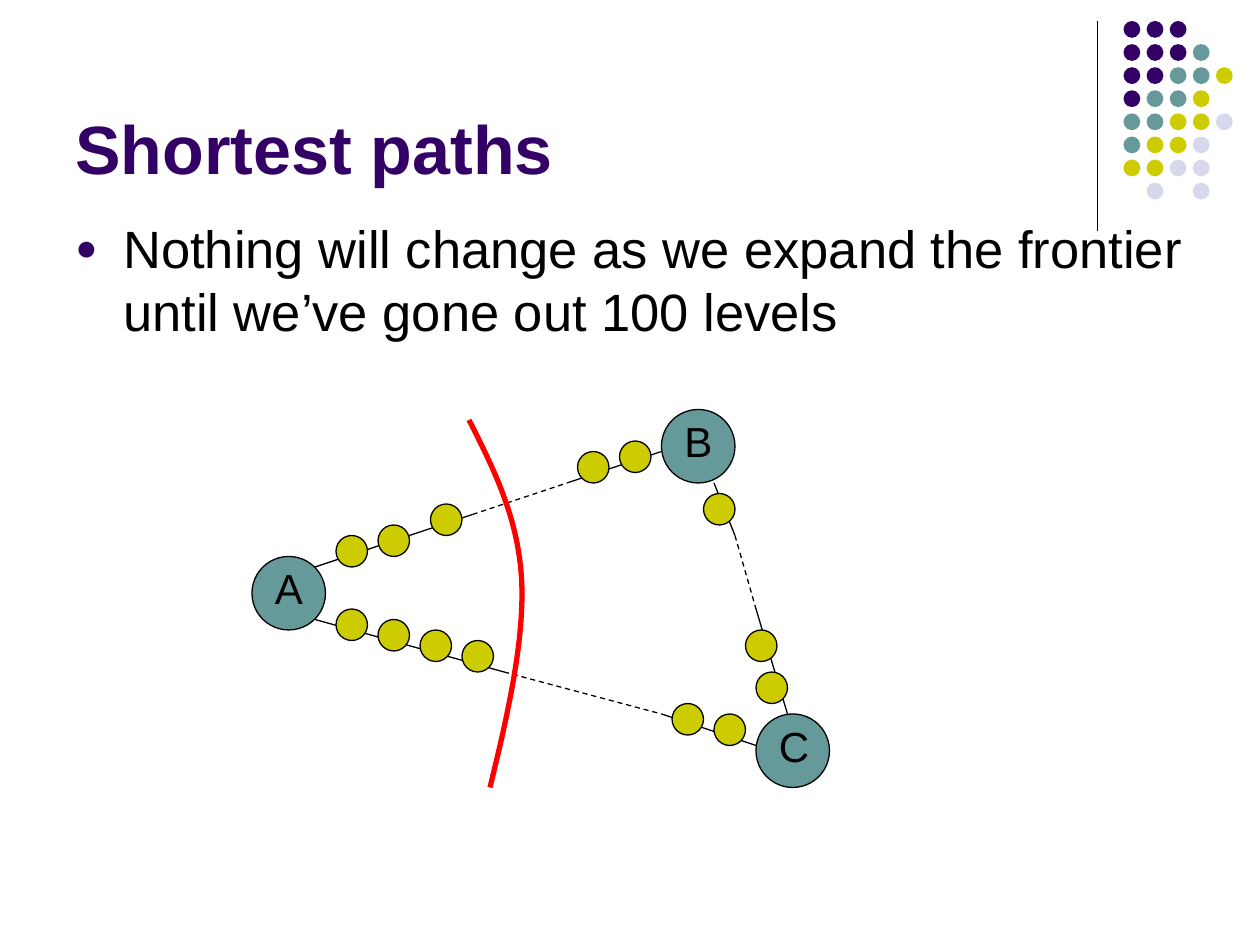
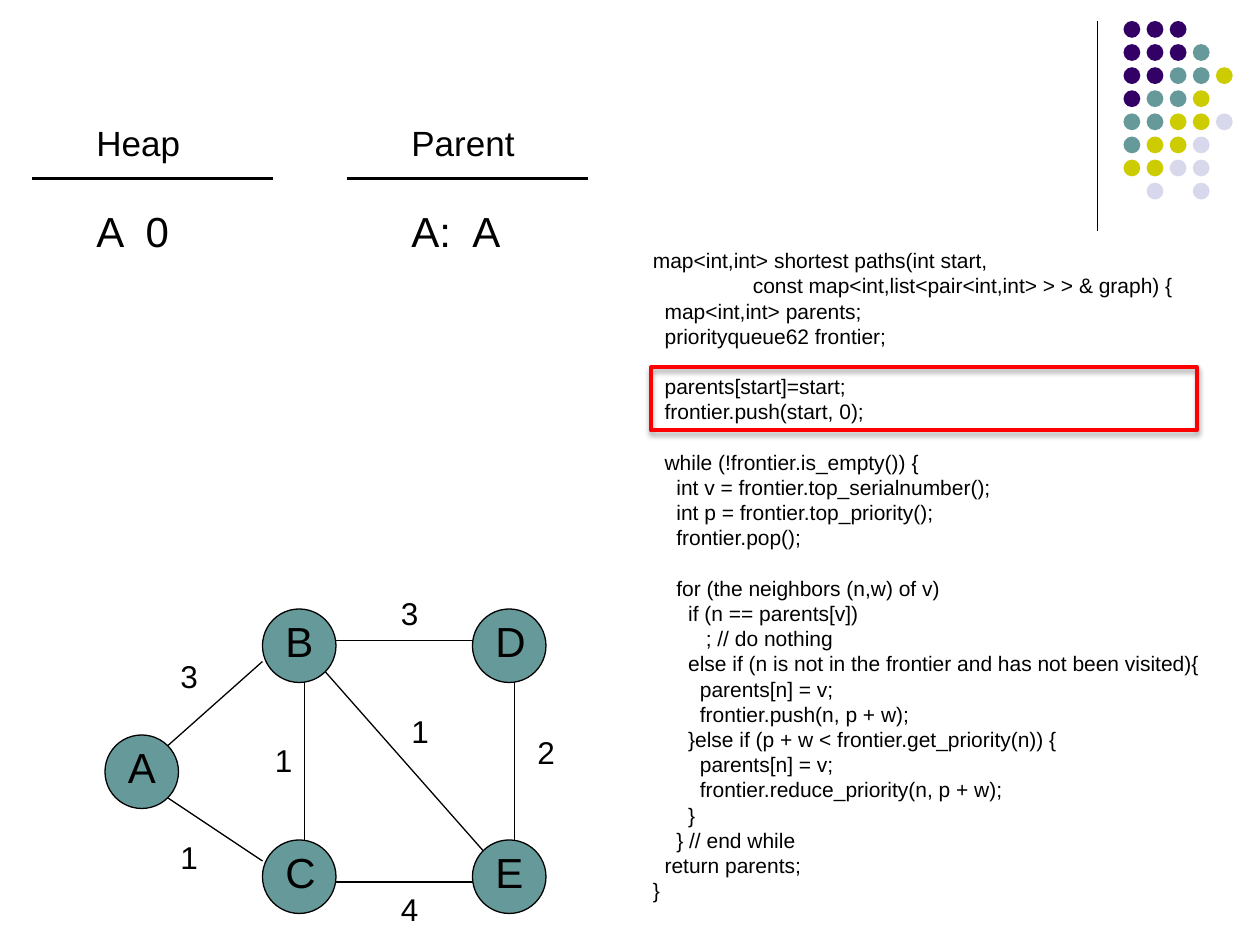
from dataclasses import dataclass
from typing import NamedTuple

from lxml.etree import SubElement
from pptx import Presentation
from pptx.dml.color import RGBColor
from pptx.enum.dml import MSO_LINE
from pptx.enum.shapes import MSO_CONNECTOR, MSO_SHAPE
from pptx.enum.text import MSO_ANCHOR
from pptx.oxml.ns import qn
from pptx.util import Inches, Pt

COLORS = {
    "ink": "000000",
    "purple": "330066",
    "teal": "669999",
    "olive": "CCCC00",
    "mist": "D8D8EC",
    "red": "FF0000",
}
FONT = "Arial"
WIDTH, HEIGHT = Inches(10), Inches(7.5)
COLUMNS = 120
CELL = WIDTH // COLUMNS
LEADING = 1.2
SPACE_WIDTH = 0.28
NODE_SIZE, BEAD_SIZE = 7, 3
DOT_SIZE, DOT_PITCH = 1.6, 2.2
DOT_COLORS = {"p": "purple", "t": "teal", "o": "olive", "m": "mist"}
DOT_ROWS = ("ppp", "pppt", "pptto", "ptto", "ttoom", "toom", "oomm", ".m.m")


class Box(NamedTuple):
    left: float
    top: float
    width: float
    height: float


class Edge(NamedTuple):
    x1: float
    y1: float
    x2: float
    y2: float
    dashed: bool = False


class Node(NamedTuple):
    name: str
    left: float
    top: float


class CodeLine(NamedTuple):
    spaces: int
    text: str
    gap_lines: int = 0


@dataclass(frozen=True)
class TextStyle:
    size: float
    color: str = "ink"
    bold: bool = False
    anchor: MSO_ANCHOR = MSO_ANCHOR.TOP


TITLE = TextStyle(39, "purple", True, MSO_ANCHOR.BOTTOM)
BODY, LABEL, HEADING, WEIGHT, CODE = map(TextStyle, (30, 24, 20, 18, 12))

PATH_NODES = (Node("A", 24, 53), Node("B", 63, 39), Node("C", 72, 68))
PATH_EDGES = (
    Edge(30, 54, 45, 49), Edge(45, 49, 54, 46, True), Edge(54, 46, 63, 43),
    Edge(30, 59, 48, 64), Edge(48, 64, 63, 68, True), Edge(63, 68, 72, 71),
    Edge(68, 46, 70, 51), Edge(70, 51, 72, 58, True), Edge(72, 58, 75, 68),
)
BEADS = (
    (32, 51), (36, 50), (41, 48), (55, 43), (59, 42),
    (32, 58), (36, 59), (40, 60), (44, 61), (64, 67), (68, 68),
    (72, 64), (71, 60), (67, 47),
)
FRONTIER = (
    ((44.67, 40), (47, 44.6), (49.3, 49.2), (49.67, 55)),
    ((49.67, 55), (50, 60.8), (48.4, 67.9), (46.67, 75)),
)

GRAPH_NODES = (
    Node("A", 10, 70), Node("B", 25, 58), Node("C", 25, 80),
    Node("E", 45, 80), Node("D", 45, 58),
)
GRAPH_EDGES = (
    Edge(16, 71, 25, 63), Edge(16, 76, 25, 82), Edge(32, 84, 45, 84),
    Edge(49, 80, 49, 65), Edge(29, 80, 29, 65), Edge(32, 61, 45, 61),
    Edge(31, 64, 46, 81),
)
WEIGHTS = (
    ("1", 16, 79.2), ("1", 25, 70), ("3", 16, 62), ("3", 37, 56),
    ("2", 50, 69.2), ("1", 38, 67.2), ("4", 37, 84.2),
)
TABLES = (("Heap", "A\t0", 8, 4.7), ("Parent", "A:\tA", 38, 5.8))
CODE_LINES = (
    CodeLine(0, "map<int,int> shortest paths(int start,"),
    CodeLine(17, "const map<int,list<pair<int,int> > > & graph) {"),
    CodeLine(2, "map<int,int> parents;"),
    CodeLine(2, "priorityqueue62 frontier;"),
    CodeLine(2, "parents[start]=start;", 1),
    CodeLine(2, "frontier.push(start, 0);"),
    CodeLine(2, "while (!frontier.is_empty()) {", 1),
    CodeLine(4, "int v = frontier.top_serialnumber();"),
    CodeLine(4, "int p = frontier.top_priority();"),
    CodeLine(4, "frontier.pop();"),
    CodeLine(4, "for (the neighbors (n,w) of v)", 1),
    CodeLine(6, "if (n == parents[v])"),
    CodeLine(9, "; // do nothing"),
    CodeLine(6, "else if (n is not in the frontier and has not been visited){"),
    CodeLine(8, "parents[n] = v;"),
    CodeLine(8, "frontier.push(n, p + w);"),
    CodeLine(6, "}else if (p + w < frontier.get_priority(n)) {"),
    CodeLine(8, "parents[n] = v;"),
    CodeLine(8, "frontier.reduce_priority(n, p + w);"),
    CodeLine(6, "}"),
    CodeLine(4, "} // end while"),
    CodeLine(2, "return parents;"),
    CodeLine(0, "}"),
)


def cells(*counts: float) -> list[int]:
    return [round(count * CELL) for count in counts]


def rgb(name: str) -> RGBColor:
    return RGBColor.from_string(COLORS[name])


def set_line(line, color: str, width: float) -> None:
    line.color.rgb = rgb(color)
    line.width = Pt(width)


def add_preset(slide, preset, box: Box, fill: str = "", line: str = "", width: float = 0.75):
    shape = slide.shapes.add_shape(preset, *cells(*box))
    shape.shadow.inherit = False
    if fill:
        shape.fill.solid()
        shape.fill.fore_color.rgb = rgb(fill)
    else:
        shape.fill.background()
    if line:
        set_line(shape.line, line, width)
    else:
        shape.line.fill.background()
    return shape


def add_edge(slide, edge: Edge, width: float = 0.75) -> None:
    connector = slide.shapes.add_connector(MSO_CONNECTOR.STRAIGHT, *cells(*edge[:4]))
    set_line(connector.line, "ink", width)
    if edge.dashed:
        connector.line.dash_style = MSO_LINE.DASH
    SubElement(connector.element.spPr, qn("a:effectLst"))


def add_text(slide, box: Box, lines: list[str], style: TextStyle):
    frame = slide.shapes.add_textbox(*cells(*box)).text_frame
    frame.word_wrap = True
    frame.vertical_anchor = style.anchor
    for index, line in enumerate(lines):
        paragraph = frame.add_paragraph() if index else frame.paragraphs[0]
        paragraph.text = line
        paragraph.line_spacing = Pt(style.size * LEADING)
        font = paragraph.font
        font.name, font.size, font.bold = FONT, Pt(style.size), style.bold
        font.color.rgb = rgb(style.color)
    return frame.paragraphs


def indent(paragraph, margin: int, first: int = 0):
    properties = paragraph._p.get_or_add_pPr()
    properties.set("marL", str(margin))
    properties.set("indent", str(first))
    return properties


def add_bullet(paragraph) -> None:
    hanging = Inches(0.38)
    properties = indent(paragraph, hanging, -hanging)
    color = SubElement(properties, qn("a:buClr"))
    SubElement(color, qn("a:srgbClr"), val=COLORS["purple"])
    SubElement(properties, qn("a:buSzPct"), val="70000")
    SubElement(properties, qn("a:buFont"), typeface=FONT)
    SubElement(properties, qn("a:buChar"), char="●")
    properties.append(properties.find(qn("a:defRPr")))


def add_tab_stop(paragraph, column: float) -> None:
    properties = paragraph._p.get_or_add_pPr()
    stops = SubElement(properties, qn("a:tabLst"))
    SubElement(stops, qn("a:tab"), pos=str(cells(column)[0]), algn="l")
    properties.append(properties.find(qn("a:defRPr")))


def add_node(slide, node: Node) -> None:
    box = Box(node.left, node.top, NODE_SIZE, NODE_SIZE)
    add_preset(slide, MSO_SHAPE.OVAL, box, "teal", "ink")
    add_text(slide, Box(node.left + 1, node.top, 6, 6), [node.name], LABEL)


def add_graph(slide, nodes: tuple[Node, ...], edges: tuple[Edge, ...]) -> None:
    for edge in edges:
        add_edge(slide, edge)
    for node in nodes:
        add_node(slide, node)


def bezier(curve, share: float) -> tuple[float, ...]:
    rest = 1 - share
    factors = (rest**3, 3 * rest**2 * share, 3 * rest * share**2, share**3)
    return tuple(sum(f * v for f, v in zip(factors, axis)) for axis in zip(*curve))


def add_frontier(slide, steps: int = 16) -> None:
    points = [
        cells(*bezier(curve, step / steps))
        for curve in FRONTIER
        for step in range(steps + 1)
    ]
    builder = slide.shapes.build_freeform(*points[0])
    builder.add_line_segments(points[1:], close=False)
    shape = builder.convert_to_shape()
    shape.shadow.inherit = False
    shape.fill.background()
    set_line(shape.line, "red", 3)


def add_highlight(slide, box: Box) -> None:
    shape = add_preset(slide, MSO_SHAPE.RECTANGLE, box, line="red", width=2.25)
    effects = shape.element.spPr.find(qn("a:effectLst"))
    shadow = SubElement(
        effects, qn("a:outerShdw"), blurRad=str(Pt(3.1)), dist=str(Pt(1.8)),
        dir="5400000", rotWithShape="0",
    )
    color = SubElement(shadow, qn("a:srgbClr"), val=COLORS["ink"])
    SubElement(color, qn("a:alpha"), val="35000")


def add_base_slide(presentation):
    slide = presentation.slides.add_slide(presentation.slide_layouts[6])
    add_edge(slide, Edge(104.5, 2, 104.5, 22))
    for row, pattern in enumerate(DOT_ROWS):
        for column, key in enumerate(pattern):
            if key in DOT_COLORS:
                box = Box(107 + column * DOT_PITCH, 2 + row * DOT_PITCH, DOT_SIZE, DOT_SIZE)
                add_preset(slide, MSO_SHAPE.OVAL, box, DOT_COLORS[key])
    return slide


def build_shortest_paths(presentation) -> None:
    slide = add_base_slide(presentation)
    add_text(slide, Box(6, 1.5, 99, 17), ["Shortest paths"], TITLE)
    add_graph(slide, PATH_NODES, PATH_EDGES)
    for left, top in BEADS:
        add_preset(slide, MSO_SHAPE.OVAL, Box(left, top, BEAD_SIZE, BEAD_SIZE), "olive", "ink")
    add_frontier(slide)
    message = "Nothing will change as we expand the frontier until we’ve gone out 100 levels"
    add_bullet(add_text(slide, Box(6, 20, 108, 16), [message], BODY)[0])


def build_code_walkthrough(presentation) -> None:
    slide = add_base_slide(presentation)
    add_graph(slide, GRAPH_NODES, GRAPH_EDGES)
    for weight, left, top in WEIGHTS:
        add_text(slide, Box(left, top, 7, 4.8), [weight], WEIGHT)
    paragraphs = add_text(slide, Box(61, 23, 55, 64.2), [line.text for line in CODE_LINES], CODE)
    for paragraph, line in zip(paragraphs, CODE_LINES):
        indent(paragraph, Pt(line.spaces * SPACE_WIDTH * CODE.size))
        paragraph.space_before = Pt(line.gap_lines * CODE.size * LEADING)
    for heading, entry, left, stop in TABLES:
        add_text(slide, Box(left, 11, 13, 5.2), [heading], HEADING)
        add_tab_stop(add_text(slide, Box(left, 19, 14, 6), [entry], LABEL)[0], stop)
        add_edge(slide, Edge(left - 5, 17, left + 18, 17), 2.25)
    add_highlight(slide, Box(62, 35, 52, 6))


def main() -> None:
    presentation = Presentation()
    presentation.slide_width, presentation.slide_height = WIDTH, HEIGHT
    build_shortest_paths(presentation)
    build_code_walkthrough(presentation)
    presentation.save("out.pptx")


if __name__ == "__main__":
    main()
